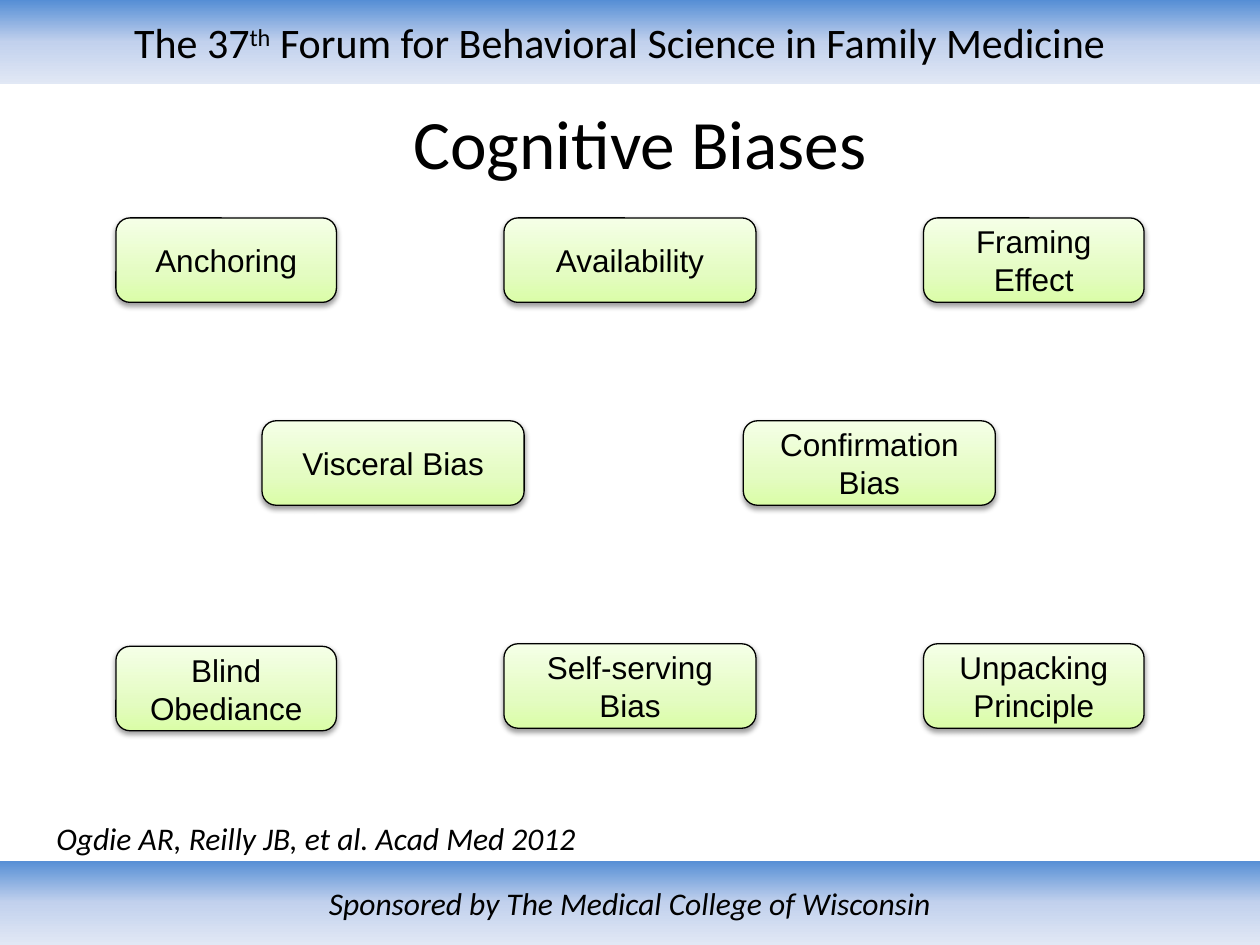
from dataclasses import dataclass

import pptx
import pptx.dml.color
import pptx.enum.shapes
import pptx.enum.text
import pptx.oxml
import pptx.oxml.ns
import pptx.util

Inches = pptx.util.Inches
Pt = pptx.util.Pt
SHAPE = pptx.enum.shapes.MSO_SHAPE
ALIGN = pptx.enum.text.PP_ALIGN
MIDDLE = pptx.enum.text.MSO_ANCHOR.MIDDLE


@dataclass(frozen=True)
class Theme:
    heading_font: str = "Calibri"
    box_font: str = "Arial"
    ink: str = "000000"
    band_stops: tuple = ((0, "558ED5"), (50, "C2D1ED"), (100, "E1E8F5"))
    box_stops: tuple = ((0, "DAFDA7"), (35, "E4FCC2"), (100, "F5FFE7"))
    title_size: float = 39.6
    header_size: int = 24
    body_size: int = 18


THEME = Theme()
WIDTH, HEIGHT = 10, 7.5
BAR_HEIGHT = 0.67
SIDE_WIDTH, CENTRE_WIDTH = 1.75, 2
LEFT, CENTRE, RIGHT = 0.92, 4, 7.33
TOP_ROW, MIDDLE_ROW, BOTTOM_ROW = 1.73, 3.34, 5.11

BIASES = [
    ("Anchoring", LEFT, TOP_ROW, SIDE_WIDTH),
    ("Availability", CENTRE, TOP_ROW, CENTRE_WIDTH),
    ("Framing Effect", RIGHT, TOP_ROW, SIDE_WIDTH),
    ("Visceral Bias", 2.08, MIDDLE_ROW, 2.08),
    ("Confirmation Bias", 5.9, MIDDLE_ROW, CENTRE_WIDTH),
    ("Blind Obediance", LEFT, BOTTOM_ROW + 0.02, SIDE_WIDTH),
    ("Self-serving Bias", CENTRE, BOTTOM_ROW, CENTRE_WIDTH),
    ("Unpacking Principle", RIGHT, BOTTOM_ROW, SIDE_WIDTH),
]


def parse_drawing(xml):
    namespace = pptx.oxml.ns.nsdecls("a")
    return pptx.oxml.parse_xml(xml.replace(" NS", " " + namespace, 1))


def set_gradient(s, stops, angle):
    s.fill.gradient()
    old = s._element.spPr.find(pptx.oxml.ns.qn("a:gradFill"))
    marks = "".join(
        f'<a:gs pos="{pos * 1000}"><a:srgbClr val="{color}"/></a:gs>'
        for pos, color in stops
    )
    new = parse_drawing(
        f'<a:gradFill NS rotWithShape="1"><a:gsLst>{marks}</a:gsLst>'
        f'<a:lin ang="{angle * 60000}" scaled="0"/></a:gradFill>'
    )
    old.getparent().replace(old, new)


def set_shadow(s):
    effects = s._element.spPr.find(pptx.oxml.ns.qn("a:effectLst"))
    effects.append(parse_drawing(
        f'<a:outerShdw NS blurRad="{Pt(3.1)}" dist="{Pt(1.6)}" dir="5400000" '
        f'rotWithShape="0"><a:srgbClr val="{THEME.ink}">'
        '<a:alpha val="38000"/></a:srgbClr></a:outerShdw>'
    ))


def write(s, runs, font, size, align=ALIGN.CENTER, italic=False):
    tf = s.text_frame
    tf.word_wrap = True
    p = tf.paragraphs[0]
    p.alignment = align
    p.font.name = font
    p.font.size = Pt(size)
    p.font.italic = italic
    p.font.color.rgb = pptx.dml.color.RGBColor.from_string(THEME.ink)
    for text in runs:
        p.add_run().text = text
    return p


def add_panel(slide, kind, left, top, width, stops, angle):
    s = slide.shapes.add_shape(
        kind, Inches(left), Inches(top), Inches(width), Inches(BAR_HEIGHT))
    set_gradient(s, stops, angle)
    s.line.fill.background()
    s.shadow.inherit = False
    s.text_frame.vertical_anchor = MIDDLE
    return s


def add_band(slide, top, runs, size, italic=False):
    s = add_panel(slide, SHAPE.RECTANGLE, 0, top, WIDTH, THEME.band_stops, 90)
    return s, write(s, runs, THEME.heading_font, size, italic=italic)


def add_bias(slide, text, left, top, width):
    s = add_panel(slide, SHAPE.ROUNDED_RECTANGLE, left, top, width,
                  THEME.box_stops, 270)
    s.line.color.rgb = pptx.dml.color.RGBColor.from_string(THEME.ink)
    s.line.width = Pt(0.75)
    set_shadow(s)
    write(s, [text], THEME.box_font, THEME.body_size)


def add_header(slide):
    runs = ["The 37", "th", " Forum for Behavioral Science in Family Medicine"]
    s, p = add_band(slide, 0, runs, THEME.header_size)
    s.text_frame.margin_right = Inches(0.26)
    p.runs[1].font._element.set("baseline", "30000")


def set_title(slide, text):
    s = slide.shapes.title
    s.left, s.top, s.width, s.height = map(Inches, (0.58, 0.75, 9, 0.75))
    s.text_frame.auto_size = pptx.enum.text.MSO_AUTO_SIZE.NONE
    s.text_frame.vertical_anchor = MIDDLE
    write(s, [text], THEME.heading_font, THEME.title_size)


def add_citation(slide, text):
    s = slide.shapes.add_textbox(
        Inches(0), Inches(6.45), Inches(4.67), Inches(0.4))
    write(s, [text], THEME.heading_font, THEME.body_size, ALIGN.RIGHT, True)


def main():
    prs = pptx.Presentation()
    prs.slide_width, prs.slide_height = Inches(WIDTH), Inches(HEIGHT)
    slide = prs.slides.add_slide(prs.slide_layouts[5])
    add_header(slide)
    add_band(slide, HEIGHT - BAR_HEIGHT,
             ["Sponsored by The Medical College of Wisconsin"],
             THEME.body_size, italic=True)
    set_title(slide, "Cognitive Biases")
    for bias in BIASES:
        add_bias(slide, *bias)
    add_citation(slide, "Ogdie AR, Reilly JB, et al. Acad Med 2012")
    prs.save("out.pptx")


if __name__ == "__main__":
    main()
